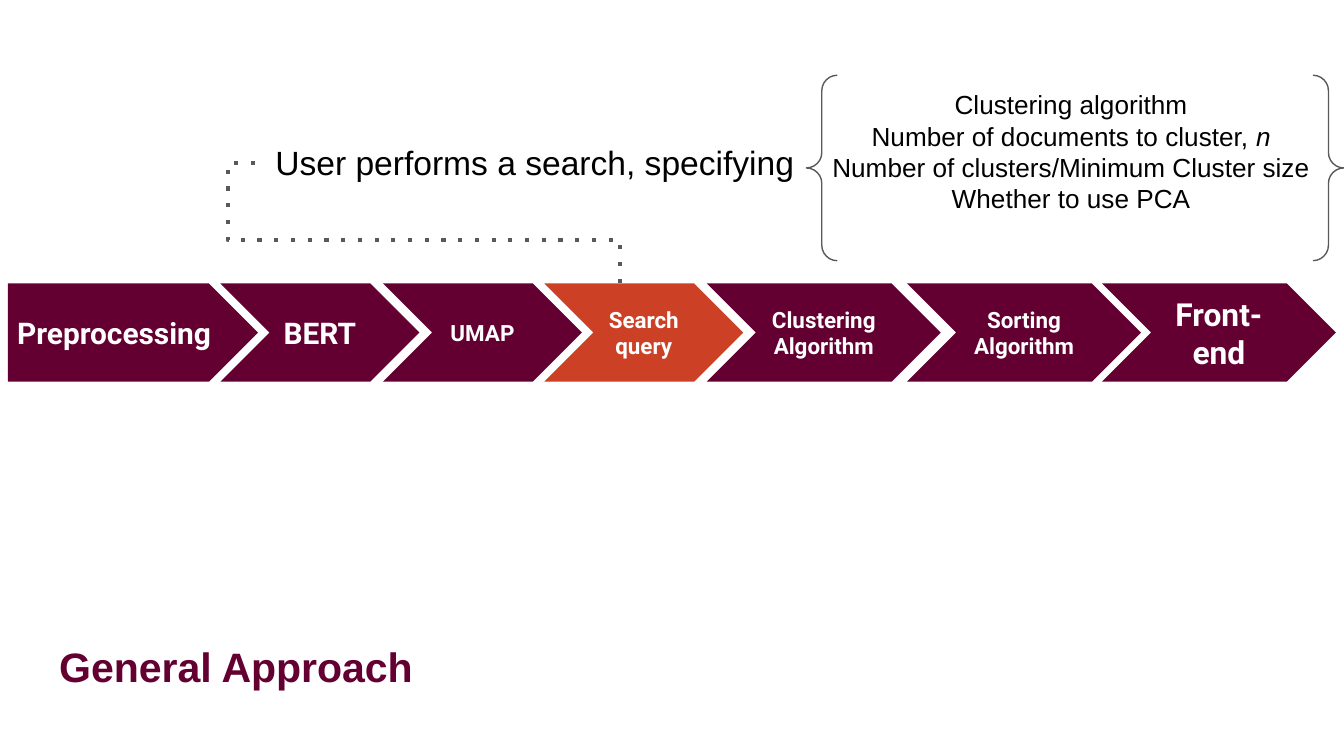
import pptx
import pptx.dml.color
import pptx.enum.dml
import pptx.enum.shapes
import pptx.enum.text
import pptx.oxml
import pptx.oxml.ns
import pptx.util
from dataclasses import dataclass

Inches = pptx.util.Inches
Pt = pptx.util.Pt
RGB = pptx.dml.color.RGBColor
Kind = pptx.enum.shapes.MSO_SHAPE
Align = pptx.enum.text.PP_ALIGN
Anchor = pptx.enum.text.MSO_ANCHOR

MAROON = RGB(0x63, 0x00, 0x31)
ORANGE = RGB(0xCC, 0x41, 0x25)
GRAY = RGB(0x59, 0x59, 0x59)
WHITE = RGB(0xFF, 0xFF, 0xFF)
BLACK = RGB(0x00, 0x00, 0x00)

STEP_TOP, STEP_HIGH = 2.11, 0.73


@dataclass
class Step:
    text: str
    left: float
    width: float
    size: float = 12
    fill: RGB = MAROON
    kind: Kind = Kind.CHEVRON
    inset: float = 0.1


STEPS = [
    Step("Preprocessing", 0.06, 1.86, 16, kind=Kind.PENTAGON, inset=0),
    Step("BERT", 1.64, 1.48, 16),
    Step("UMAP", 2.85, 1.48),
    Step("Search query", 4.05, 1.48, fill=ORANGE),
    Step("Clustering Algorithm", 5.26, 1.74),
    Step("Sorting Algorithm", 6.75, 1.74),
    Step("Front-end", 8.2, 1.74, 17),
]

# Each option is a list of (text, italic) runs
OPTIONS = [
    [("Clustering algorithm", False)],
    [("Number of documents to cluster, ", False), ("n", True)],
    [("Number of clusters/Minimum Cluster size", False)],
    [("Whether to use PCA", False)],
]


def box(left: float, top: float, width: float, high: float) -> tuple:
    return tuple(Inches(v) for v in (left, top, width, high))


def write(shape, lines: list, size: float, color: RGB, font: str = "Arial",
          bold: bool = False, align: Align = Align.LEFT,
          anchor: Anchor = Anchor.TOP, inset: float = 0.1) -> None:
    frame = shape.text_frame
    form = {
        "word_wrap": True,
        "auto_size": pptx.enum.text.MSO_AUTO_SIZE.NONE,
        "vertical_anchor": anchor,
        "margin_left": Inches(inset),
        "margin_right": Inches(0.1),
        "margin_top": Inches(0.1),
        "margin_bottom": Inches(0.1),
    }
    for name, value in form.items():
        setattr(frame, name, value)
    look = {"name": font, "size": Pt(size), "bold": bold}
    for i, line in enumerate(lines):
        para = frame.add_paragraph() if i else frame.paragraphs[0]
        para.alignment = align
        for text, slant in line:
            run = para.add_run()
            run.text = text
            for name, value in look.items():
                setattr(run.font, name, value)
            run.font.italic = slant
            run.font.color.rgb = color


def draw_step(slide, step: Step) -> None:
    shape = slide.shapes.add_shape(
        step.kind, *box(step.left, STEP_TOP, step.width, STEP_HIGH))
    shape.shadow.inherit = False
    shape.adjustments[0] = 0.5
    shape.fill.solid()
    shape.fill.fore_color.rgb = step.fill
    shape.line.fill.background()
    write(shape, [[(step.text, False)]], step.size, WHITE, "Roboto", True,
          Align.CENTER, Anchor.MIDDLE, step.inset)


def draw_link(slide) -> None:
    """Dotted four-part elbow from the search step up to its note."""
    link = slide.shapes.add_connector(
        pptx.enum.shapes.MSO_CONNECTOR.ELBOW,
        Inches(3.73), Inches(0.33), Inches(2.84), Inches(2.99))
    link.line.color.rgb = GRAY
    link.line.width = Pt(2.25)
    link.line.dash_style = pptx.enum.dml.MSO_LINE.ROUND_DOT
    qn = pptx.oxml.ns.qn
    props = link._element.spPr
    # The wide dot has no member in MSO_LINE
    props.find(qn("a:ln")).find(qn("a:prstDash")).set("val", "dot")
    props.find(qn("a:xfrm")).set("rot", str(90 * 60000))
    geom = props.find(qn("a:prstGeom"))
    geom.set("prst", "bentConnector4")
    guides = geom.find(qn("a:avLst"))
    for name, value in {"adj1": 35800, "adj2": 109800}.items():
        guide = guides.makeelement(qn("a:gd"), {})
        guide.set("name", name)
        guide.set("fmla", f"val {value}")
        guides.append(guide)
    props.append(props.makeelement(qn("a:effectLst"), {}))


def main() -> None:
    deck = pptx.Presentation()
    deck.slide_width = Inches(10)
    deck.slide_height = deck.slide_width * 9 // 16
    slide = deck.slides.add_slide(deck.slide_layouts[5])

    # Title
    title = slide.shapes.title
    title.left, title.top, title.width, title.height = box(
        0.34, 4.63, 6.56, 0.66)
    write(title, [[("General Approach", False)]], 22, MAROON, bold=True,
          anchor=Anchor.MIDDLE)

    # Braces around the search options
    brace = slide.shapes.add_shape(Kind.DOUBLE_BRACE, *box(6, 0.56, 4, 1.38))
    brace.shadow.inherit = False
    brace.fill.background()
    brace.line.color.rgb = GRAY
    brace.line.width = Pt(0.75)

    # Pipeline
    for step in STEPS:
        draw_step(slide, step)

    # Search note, its link and its options
    note = slide.shapes.add_textbox(*box(1.95, 0.96, 7.99, 0.5))
    write(note, [[("User performs a search, specifying", False)]], 18, BLACK)
    draw_link(slide)
    options = slide.shapes.add_textbox(*box(6.09, 0.56, 3.76, 1.38))
    write(options, OPTIONS, 14, BLACK, align=Align.CENTER)

    deck.save("out.pptx")


if __name__ == "__main__":
    main()
